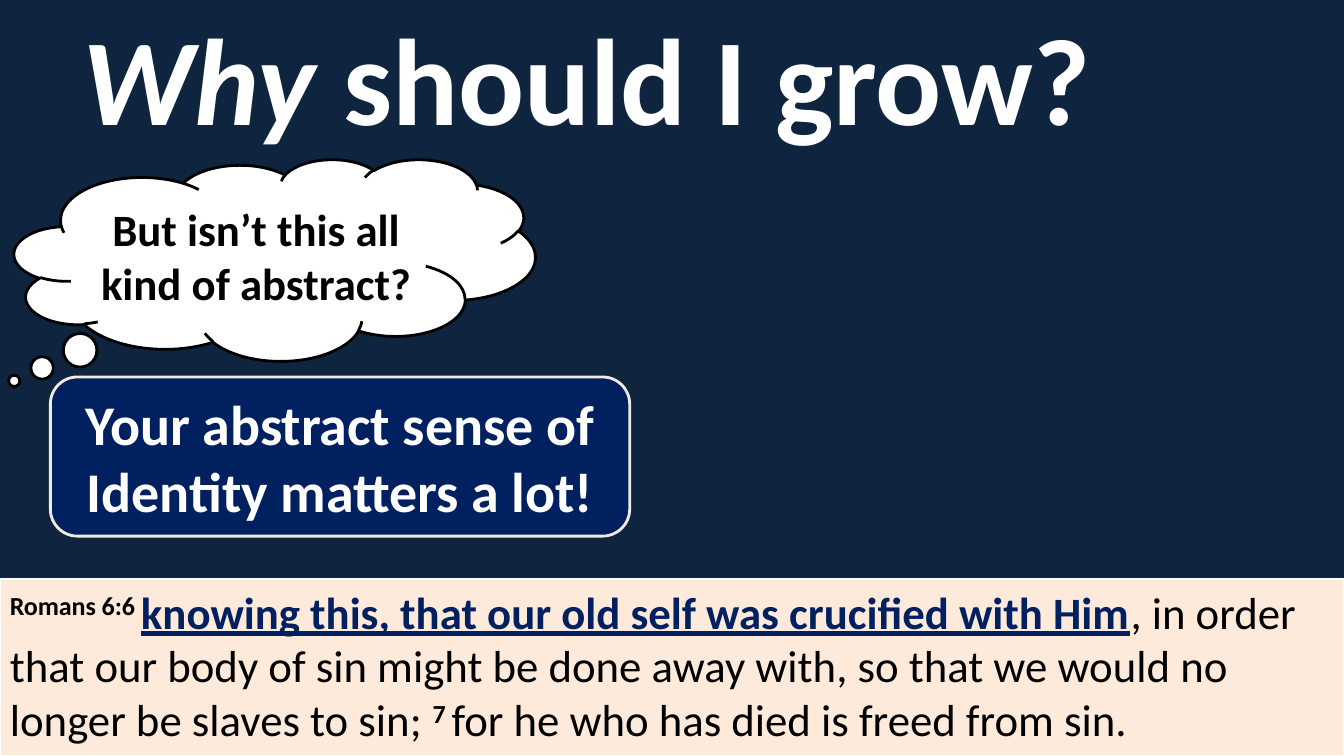
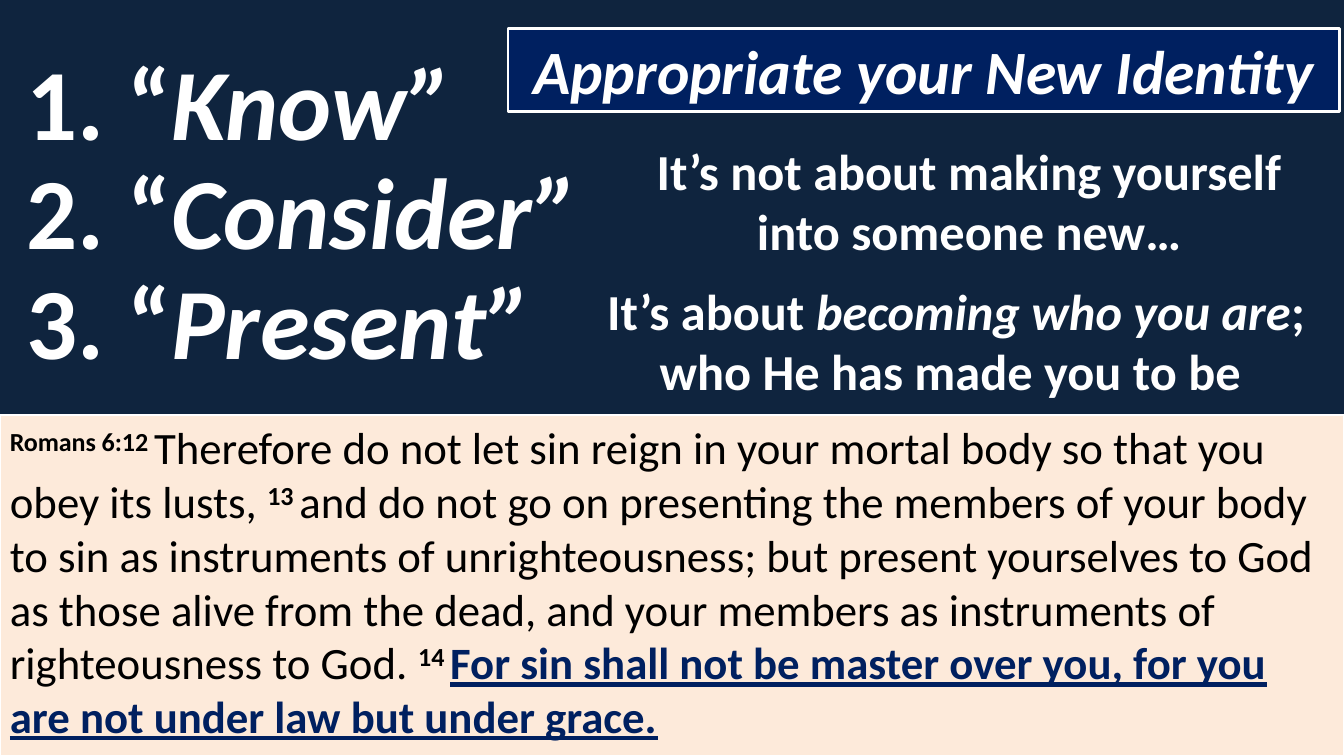
from lxml import etree
from pptx import Presentation
from pptx.dml.color import RGBColor
from pptx.enum.shapes import MSO_SHAPE
from pptx.enum.text import MSO_ANCHOR, MSO_AUTO_SIZE, PP_ALIGN
from pptx.oxml.ns import qn
from pptx.util import Cm, Pt

RECT = MSO_SHAPE.RECTANGLE
CLOUD = MSO_SHAPE.CLOUD_CALLOUT
BUBBLE = MSO_SHAPE.ROUNDED_RECTANGULAR_CALLOUT
LEFT, CENTER = PP_ALIGN.LEFT, PP_ALIGN.CENTER
TOP, MIDDLE = MSO_ANCHOR.TOP, MSO_ANCHOR.MIDDLE
FIXED = MSO_AUTO_SIZE.NONE

# Shared look
WIDE, HIGH = 33.87, 19.05
FONT = "Calibri"
NIGHT, NAVY, PEACH = "0F243E", "002060", "FDEADA"
CREAM, WHITE, BLACK = "EEECE1", "FFFFFF", "000000"
TAIL = (-0.22, 0.5, 0.17)
TITLE_ONLY = 5


def color(code):
    return RGBColor.from_string(code)


def place(shape, box):
    shape.left, shape.top, shape.width, shape.height = map(Cm, box)


def paint(shape, fill, line, width=2):
    """Fill and outline a shape; None leaves that part empty."""
    if fill:
        shape.fill.solid()
        shape.fill.fore_color.rgb = color(fill)
    else:
        shape.fill.background()
    if line:
        shape.line.color.rgb = color(line)
        shape.line.width = Pt(width)
    else:
        shape.line.fill.background()


def write(shape, runs, size, ink=WHITE, bold=True, align=CENTER,
          anchor=MIDDLE):
    """Write (text, style) runs: i italic, n verse number, k key words."""
    frame = shape.text_frame
    frame.word_wrap = True
    frame.auto_size = FIXED
    frame.vertical_anchor = anchor
    para = frame.paragraphs[0]
    para.alignment = align
    font = para.font
    font.name, font.size, font.bold = FONT, Pt(size), bold
    font.color.rgb = color(ink)
    for text, style in runs:
        run = para.add_run()
        run.text = text
        if style == "i":
            run.font.italic = True
        elif style == "n":
            run.font.bold = True
            run._r.get_or_add_rPr().set("baseline", "30000")
        elif style == "k":
            run.font.bold = run.font.underline = True
            run.font.color.rgb = color(NAVY)


def add_form(slide, kind, box, fill=None, line=None, width=2, adjust=()):
    shape = slide.shapes.add_shape(kind, *map(Cm, box))
    shape.shadow.inherit = False
    for spot, value in enumerate(adjust):
        shape.adjustments[spot] = value
    paint(shape, fill, line, width)
    return shape


def add_bubble(slide, box, runs, size, fill=None, line=None):
    shape = add_form(slide, BUBBLE, box, fill, line, adjust=TAIL)
    write(shape, runs, size)


def add_title(slide, box, runs, size):
    title = slide.shapes.title
    place(title, box)
    write(title, runs, size)
    return title


def round_off(title):
    """Give the title placeholder a rounded outline."""
    geom = etree.Element(qn("a:prstGeom"), prst="roundRect")
    etree.SubElement(geom, qn("a:avLst"))
    title.element.spPr.insert(1, geom)
    paint(title, NAVY, WHITE)


def add_verse(slide, top, runs):
    """Scripture band from top down to the foot of the slide."""
    band = add_form(slide, RECT, (0, top, WIDE, HIGH - top),
                    PEACH, WHITE, 1.5)
    write(band, runs, 32, BLACK, False, LEFT, TOP)


def add_steps(slide, words):
    for step, word in enumerate(words):
        box = (0.42, 0.84 + step * 2.76, 14.6, 3.35)
        text = slide.shapes.add_textbox(*map(Cm, box))
        write(text, [(f"{step + 1}. “", ""), (f"{word}”", "i")], 72,
              align=LEFT)


def why_slide(slide):
    add_title(slide, (0.64, 0.25, 29, 3.35),
              [("Why", "i"), (" should I grow? ", "")], 88)
    add_bubble(slide, (1.27, 9.5, 14.6, 4.01),
               [("Your abstract sense of Identity matters a lot!", "")],
               40, NAVY, CREAM)
    cloud = add_form(slide, CLOUD, (0.36, 4.01, 13.13, 5.08),
                     WHITE, BLACK, adjust=(-0.5, 0.6))
    write(cloud, [("But isn’t this all kind of abstract?", "")], 32, BLACK)
    add_verse(slide, 14.6, [
        ("Romans 6:6 ", "n"),
        ("knowing this, that our old self was crucified with Him", "k"),
        (", in order that our body of sin might be done away with, "
         "so that we would no longer be slaves to sin; ", ""),
        ("7 ", "n"),
        ("for he who has died is freed from sin.", "")])


def identity_slide(slide):
    title = add_title(slide, (12.8, 0.71, 20.96, 2.11),
                      [("Appropriate your New Identity", "i")], 44)
    round_off(title)
    add_verse(slide, 10.46, [
        ("Romans 6:12 ", "n"),
        ("Therefore do not let sin reign in your mortal body so that "
         "you obey its lusts, ", ""),
        ("13 ", "n"),
        ("and do not go on presenting the members of your body to "
         "sin as instruments of unrighteousness; but present yourselves "
         "to God as those alive from the dead, and your members as "
         "instruments of righteousness to God. ", ""),
        ("14 ", "n"),
        ("For sin shall not be master over you, for you are not under "
         "law but under grace.", "k")])
    add_steps(slide, ["Know", "Consider", "Present"])
    add_bubble(slide, (15.09, 3.18, 18.67, 3.73),
               [("It’s not about making yourself into someone new…", "")],
               36)
    add_bubble(slide, (14.76, 6.71, 18.67, 3.73),
               [("It’s about ", ""), ("becoming who you are", "i"),
                ("; who He has made you to be ", "")], 36)


def main():
    deck = Presentation()
    deck.slide_width, deck.slide_height = Cm(WIDE), Cm(HIGH)
    back = deck.slide_master.background.fill
    back.solid()
    back.fore_color.rgb = color(NIGHT)
    for build in (why_slide, identity_slide):
        build(deck.slides.add_slide(deck.slide_layouts[TITLE_ONLY]))
    deck.save("out.pptx")


if __name__ == "__main__":
    main()
